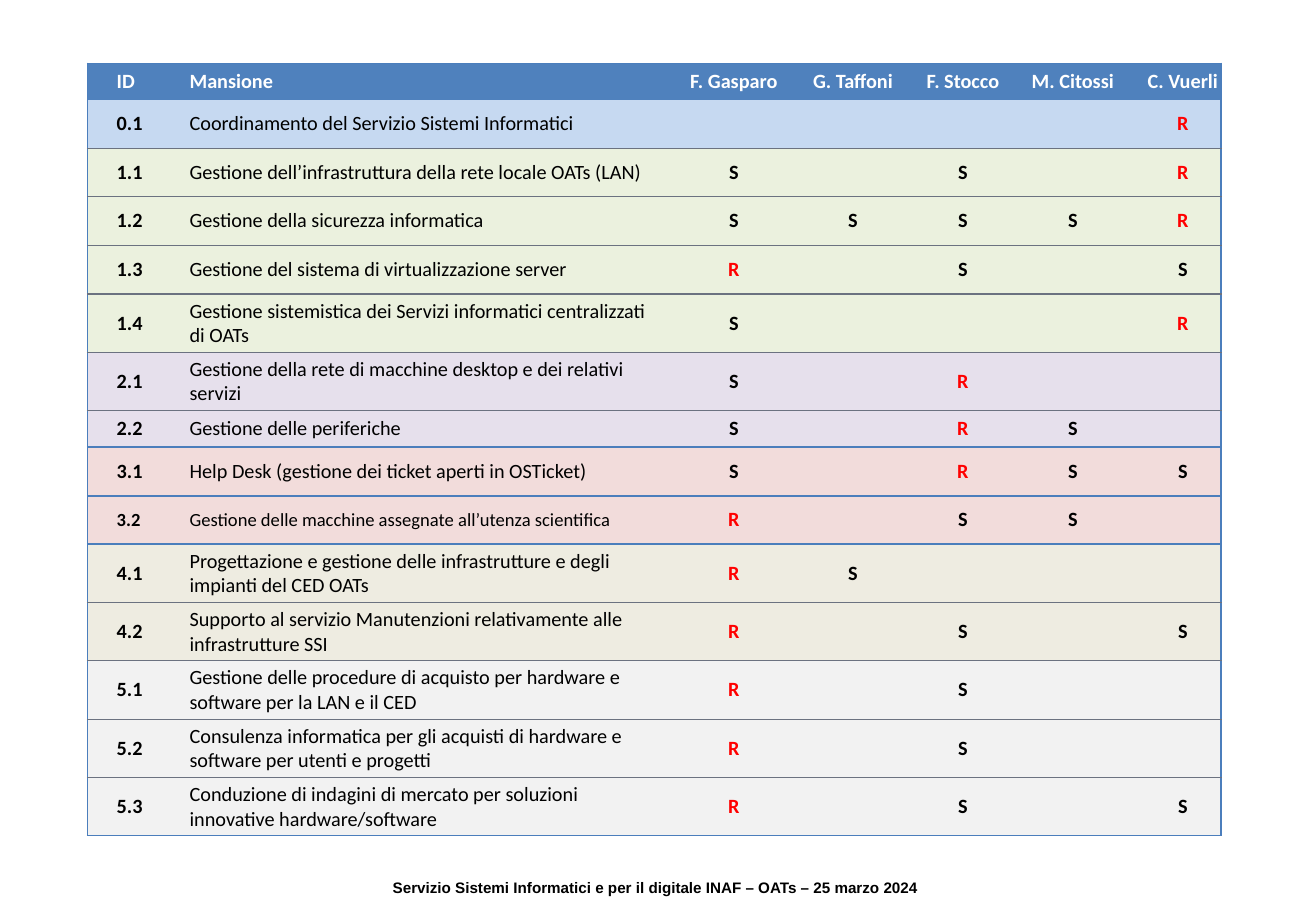
from lxml import etree
from pptx import Presentation
from pptx.dml.color import RGBColor
from pptx.enum.text import MSO_ANCHOR, PP_ALIGN
from pptx.oxml.ns import qn
from pptx.util import Inches, Pt

LEFT, CENTER = PP_ALIGN.LEFT, PP_ALIGN.CENTER
MIDDLE = MSO_ANCHOR.MIDDLE

COLORS = {
    "header": "4F81BD", "frame": "4B7EBC", "rule": "6B7280",
    "white": "FFFFFF", "black": "000000", "red": "FF0000",
    "0": "C6D9F1", "1": "EBF1DE", "2": "E6E0EC",
    "3": "F2DCDB", "4": "EEECE1", "5": "F2F2F2",
}
COL_WIDTHS = [0.6, 4.09, 1.02, 0.94, 0.87, 0.94, 0.87]
LOW_ROWS = ("ID", "2.2")
FRAME_RULES = {"2.2": 0.75, "3.1": 1.5, "3.2": 1.5, "5.3": 0.75}

HEADER = ["ID", "Mansione", "F. Gasparo", "G. Taffoni", "F. Stocco", "M. Citossi", "C. Vuerli"]
TASKS = [
    ("0.1", "Coordinamento del Servizio Sistemi Informatici", "----R"),
    ("1.1", "Gestione dell’infrastruttura della rete locale OATs (LAN)", "S-S-R"),
    ("1.2", "Gestione della sicurezza informatica", "SSSSR"),
    ("1.3", "Gestione del sistema di virtualizzazione server", "R-S-S"),
    ("1.4", "Gestione sistemistica dei Servizi informatici centralizzati di OATs", "S---R"),
    ("2.1", "Gestione della rete di macchine desktop e dei relativi servizi", "S-R--"),
    ("2.2", "Gestione delle periferiche", "S-RS-"),
    ("3.1", "Help Desk (gestione dei ticket aperti in OSTicket)", "S-RSS"),
    ("3.2", "Gestione delle macchine assegnate all’utenza scientifica", "R-SS-"),
    ("4.1", "Progettazione e gestione delle infrastrutture e degli impianti del CED OATs", "RS---"),
    ("4.2", "Supporto al servizio Manutenzioni relativamente alle infrastrutture SSI", "R-S-S"),
    ("5.1", "Gestione delle procedure di acquisto per hardware e software per la LAN e il CED", "R-S--"),
    ("5.2", "Consulenza informatica per gli acquisti di hardware e software per utenti e progetti", "R-S--"),
    ("5.3", "Conduzione di indagini di mercato per soluzioni innovative hardware/software", "R-S-S"),
]


def rgb(name):
    return RGBColor.from_string(COLORS[name])


def write(tf, text, size=12, font="Calibri", color="black", bold=False, align=LEFT, indent=0):
    tf.word_wrap = True
    p = tf.paragraphs[0]
    p.alignment = align
    p._p.get_or_add_pPr().set("marL", str(Inches(indent)))
    r = p.add_run()
    r.text = text
    r.font.size = Pt(size)
    r.font.name = font
    r.font.bold = bold
    r.font.color.rgb = rgb(color)


def set_border(cell, side, color=None, width=0.75):
    ln = etree.SubElement(cell._tc.get_or_add_tcPr(), qn(f"a:ln{side}"), w=str(Pt(width)))
    if color:
        fill = etree.SubElement(ln, qn("a:solidFill"))
        etree.SubElement(fill, qn("a:srgbClr"), val=COLORS[color])
    else:
        etree.SubElement(ln, qn("a:noFill"))


def rule_below(task_id):
    if task_id == "ID":
        return None, 0.75
    if task_id in FRAME_RULES:
        return "frame", FRAME_RULES[task_id]
    return "rule", 0.75


def format_cell(cell, col, fill, above, below):
    cell.vertical_anchor = MIDDLE
    cell.margin_left = cell.margin_right = 0
    cell.margin_top = cell.margin_bottom = Inches(0.04) if cell.text else 0
    set_border(cell, "L", "frame" if col == 0 else None)
    set_border(cell, "R", "frame" if col == len(COL_WIDTHS) - 1 else None)
    set_border(cell, "T", *above)
    set_border(cell, "B", *below)
    cell.fill.solid()
    cell.fill.fore_color.rgb = rgb(fill)


def add_task_table(s):
    rows = [HEADER] + [[task_id, task, *roles.replace("-", " ")] for task_id, task, roles in TASKS]
    table = s.shapes.add_table(len(rows), len(COL_WIDTHS), Inches(0.72), Inches(0.52),
                               Inches(sum(COL_WIDTHS)), Inches(5.8)).table
    for column, width in zip(table.columns, COL_WIDTHS):
        column.width = Inches(width)
    above = ("frame", 0.75)
    for i, values in enumerate(rows):
        task_id = values[0]
        is_header = i == 0
        table.rows[i].height = Inches(0.3 if task_id in LOW_ROWS else 0.4)
        below = rule_below(task_id)
        for col, text in enumerate(values):
            cell = table.cell(i, col)
            if text.strip():
                color = "white" if is_header else "red" if text == "R" else "black"
                write(cell.text_frame, text, size=11 if task_id == "3.2" and col < 2 else 12,
                      color=color, bold=is_header or col != 1,
                      align=LEFT if col < 2 else CENTER, indent=0.24)
            format_cell(cell, col, "header" if is_header else task_id[0], above, below)
        above = below


def add_footer(s):
    box = s.shapes.add_textbox(Inches(1.92), Inches(7.18), Inches(6.94), Inches(0.25))
    write(box.text_frame, "Servizio Sistemi Informatici e per il digitale INAF – OATs – 25 marzo 2024",
          size=9, font="Arial", bold=True, align=CENTER)


def main():
    prs = Presentation()
    prs.slide_width, prs.slide_height = Inches(10.83), Inches(7.5)
    s = prs.slides.add_slide(prs.slide_layouts[6])
    add_footer(s)
    add_task_table(s)
    prs.save("out.pptx")


if __name__ == "__main__":
    main()
